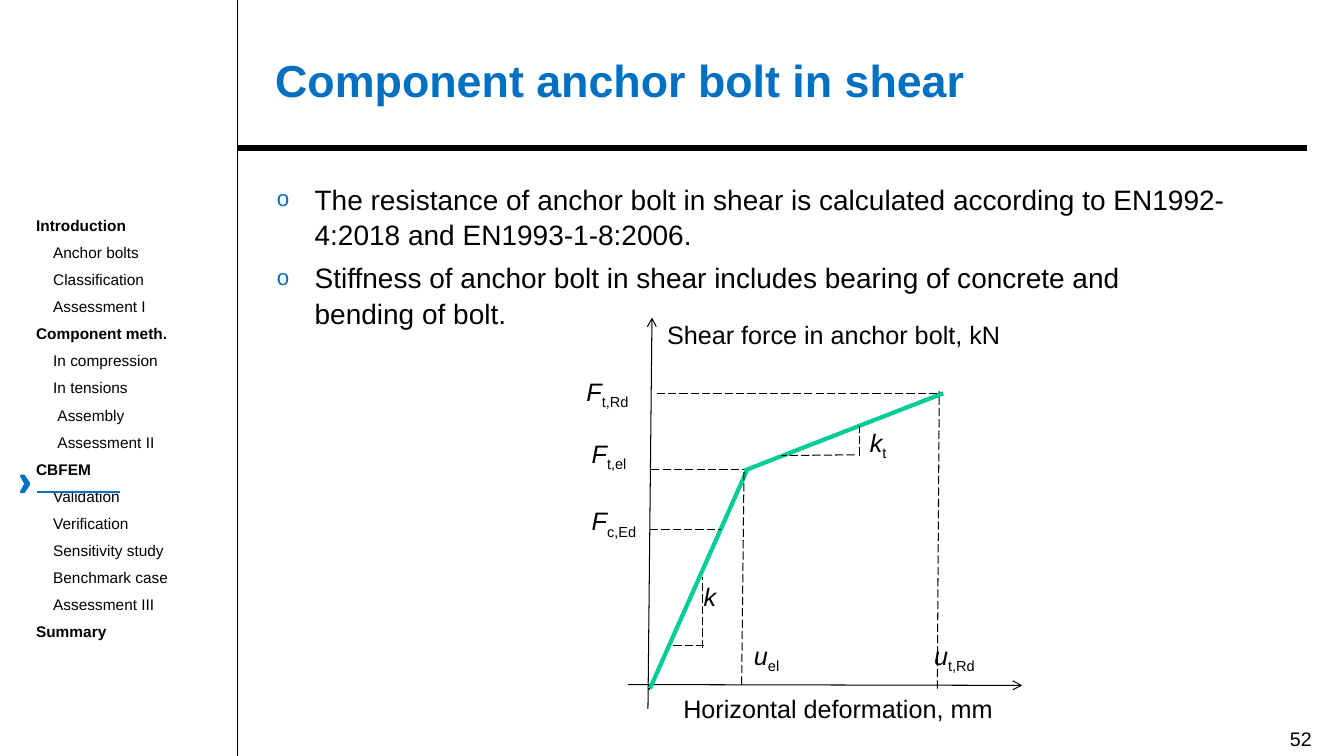
from dataclasses import dataclass, field
from typing import NamedTuple

from lxml import etree
from pptx import Presentation
from pptx.dml.color import RGBColor
from pptx.enum.dml import MSO_LINE
from pptx.enum.shapes import MSO_CONNECTOR
from pptx.enum.text import MSO_ANCHOR, PP_ALIGN
from pptx.oxml.ns import qn
from pptx.util import Cm, Pt

STRAIGHT, ELBOW = MSO_CONNECTOR.STRAIGHT, MSO_CONNECTOR.ELBOW
LONG_DASH = MSO_LINE.LONG_DASH
MIDDLE, TOP = MSO_ANCHOR.MIDDLE, MSO_ANCHOR.TOP
LEFT = PP_ALIGN.LEFT
TITLE_ONLY = 5


@dataclass(frozen=True)
class Theme:
    font: str = "Arial"
    black: RGBColor = field(default_factory=lambda: RGBColor(0, 0, 0))
    blue: RGBColor = field(default_factory=lambda: RGBColor(0x00, 0x70, 0xC0))
    green: RGBColor = field(default_factory=lambda: RGBColor(0x00, 0xCC, 0x99))
    title: int = 32
    body: int = 20
    label: int = 18
    page: int = 14
    menu: int = 11


THEME = Theme()


class Stroke(NamedTuple):
    color: RGBColor
    width: float
    dashed: bool = False
    arrow: bool = False


class Segment(NamedTuple):
    start: tuple[float, float]
    end: tuple[float, float]
    stroke: Stroke
    route: int = STRAIGHT


class Label(NamedTuple):
    box: tuple[float, float, float, float]
    text: str
    subscript: str = ""
    italic: bool = True


class MenuItem(NamedTuple):
    text: str
    indent: float = 0


FRAME = Stroke(THEME.black, 0.75)
RULE = Stroke(THEME.black, 4.5)
AXIS = Stroke(THEME.black, 0.75, arrow=True)
GUIDE = Stroke(THEME.black, 0.75, dashed=True)
CURVE = Stroke(THEME.green, 3)
MARKER = Stroke(THEME.blue, 1.5)

FRAME_LINES = [
    Segment((5.99, 19.05), (5.99, 0), FRAME),
    Segment((5.99, 3.73), (32.94, 3.73), RULE),
]
DIAGRAM_LINES = [
    Segment((23.62, 17.35), (23.67, 9.86), GUIDE),
    Segment((16.33, 17.86), (16.43, 8), AXIS),
    Segment((15.82, 17.25), (25.76, 17.27), AXIS),
    Segment((16.33, 17.3), (16.38, 17.35), Stroke(THEME.black, 1.5), ELBOW),
    Segment((16.38, 17.35), (18.82, 11.86), CURVE),
    Segment((23.77, 9.91), (18.75, 11.86), CURVE),
    Segment((23.62, 9.91), (16.56, 9.91), GUIDE),
    Segment((18.69, 17.25), (18.75, 11.84), GUIDE),
    Segment((16.41, 11.84), (18.75, 11.84), GUIDE),
    Segment((16.38, 13.34), (18.16, 13.34), GUIDE),
    Segment((17.7, 16.33), (17.7, 14.53), GUIDE),
    Segment((17.75, 16.26), (16.94, 16.26), GUIDE),
    Segment((21.54, 11.46), (19.69, 11.48), GUIDE),
    Segment((21.67, 11.48), (21.67, 10.74), GUIDE),
]
DIAGRAM_LABELS = [
    Label((16.56, 7.92, 9.78, 1.42), "Shear force in anchor bolt, kN", italic=False),
    Label((16.97, 17.35, 9.35, 1.22), "Horizontal deformation, mm", italic=False),
    Label((18.75, 16, 2.01, 1.5), "u", "el"),
    Label((23.29, 16, 2.24, 1.63), "u", "t,Rd"),
    Label((14.53, 9.35, 2.44, 1.4), "F", "t,Rd"),
    Label((14.66, 10.92, 2.41, 1.42), "F", "t,el"),
    Label((14.66, 12.62, 2.29, 1.5), "F", "c,Ed"),
    Label((17.48, 14.53, 0.91, 1.32), "k"),
    Label((21.67, 10.64, 1.78, 1.7), "k", "t"),
]
SUB, DEEP = 0.43, 0.54
MENU = [
    MenuItem("Introduction"),
    MenuItem("Anchor bolts", SUB),
    MenuItem("Classification", SUB),
    MenuItem("Assessment I", SUB),
    MenuItem("Component meth."),
    MenuItem("In compression", SUB),
    MenuItem("In tensions", SUB),
    MenuItem("Assembly", DEEP),
    MenuItem("Assessment II", DEEP),
    MenuItem("CBFEM"),
    MenuItem("Validation", SUB),
    MenuItem("Verification", SUB),
    MenuItem("Sensitivity study", SUB),
    MenuItem("Benchmark case", SUB),
    MenuItem("Assessment III", SUB),
    MenuItem("Summary"),
]
STATEMENTS = [
    "The resistance of anchor bolt in shear is calculated according to "
    "EN1992-4:2018 and EN1993-1-8:2006.",
    "Stiffness of anchor bolt in shear includes bearing of concrete and \vbending of bolt.",
]
CHEVRON = [(0.53, 11.99), (0.61, 11.99), (0.74, 12.19), (0.61, 12.4), (0.53, 12.4), (0.64, 12.19)]
CHEVRON_UNDERLINE = Segment((0.94, 12.4), (3.02, 12.4), MARKER)


def format_run(run, size: int, color: RGBColor = THEME.black, **extra) -> None:
    values = {"name": THEME.font, "size": Pt(size), "bold": False, "italic": False} | extra
    for name, value in values.items():
        setattr(run.font, name, value)
    run.font.color.rgb = color


def add_text_frame(slide, box: tuple, wrap: bool = True):
    frame = slide.shapes.add_textbox(*map(Cm, box)).text_frame
    frame.word_wrap = wrap
    frame.vertical_anchor = TOP
    return frame


def next_paragraph(frame, index: int, gap: float):
    """Return the paragraph at index, with space before all but the first."""
    if index == 0:
        return frame.paragraphs[0]
    paragraph = frame.add_paragraph()
    paragraph.space_before = Pt(gap)
    return paragraph


def draw_segment(slide, segment: Segment) -> None:
    stroke = segment.stroke
    connector = slide.shapes.add_connector(
        segment.route, *map(Cm, segment.start + segment.end))
    connector.line.color.rgb = stroke.color
    connector.line.width = Pt(stroke.width)
    if stroke.dashed:
        connector.line.dash_style = LONG_DASH
    properties = connector._element.spPr
    if stroke.arrow:
        etree.SubElement(properties.find(qn("a:ln")), qn("a:tailEnd"), type="arrow")
    etree.SubElement(properties, qn("a:effectLst"))


def draw_label(slide, label: Label) -> None:
    paragraph = add_text_frame(slide, label.box).paragraphs[0]
    symbol = paragraph.add_run()
    symbol.text = label.text
    format_run(symbol, THEME.label, italic=label.italic)
    if label.subscript:
        subscript = paragraph.add_run()
        subscript.text = label.subscript
        format_run(subscript, THEME.label)
        subscript._r.get_or_add_rPr().set("baseline", "-25000")


def draw_title(slide) -> None:
    title = slide.shapes.title
    box = {"left": 6.68, "top": 0.71, "width": 25.86, "height": 2.57}
    for name, value in box.items():
        setattr(title, name, Cm(value))
    title.text_frame.text = "Component anchor bolt in shear"
    title.text_frame.vertical_anchor = MIDDLE
    paragraph = title.text_frame.paragraphs[0]
    paragraph.alignment = LEFT
    format_run(paragraph.runs[0], THEME.title, THEME.blue, bold=True)


def draw_menu(slide) -> None:
    frame = add_text_frame(slide, (0.66, 5.33, 5.46, 11.51))
    for index, item in enumerate(MENU):
        paragraph = next_paragraph(frame, index, 6.1)
        paragraph.text = item.text
        paragraph._p.get_or_add_pPr().set("marL", str(Cm(item.indent)))
        format_run(paragraph.runs[0], THEME.menu, bold=item.indent == 0)


def add_bullet(paragraph) -> None:
    properties = paragraph._p.get_or_add_pPr()
    properties.set("marL", str(Cm(0.95)))
    properties.set("indent", str(Cm(-0.95)))
    color = etree.SubElement(properties, qn("a:buClr"))
    etree.SubElement(color, qn("a:srgbClr"), val=str(THEME.blue))
    etree.SubElement(properties, qn("a:buSzPct"), val="80000")
    etree.SubElement(properties, qn("a:buFont"), typeface=THEME.font)
    etree.SubElement(properties, qn("a:buChar"), char="o")


def draw_statements(slide) -> None:
    frame = add_text_frame(slide, (6.73, 4.42, 26.3, 4.09))
    for index, statement in enumerate(STATEMENTS):
        paragraph = next_paragraph(frame, index, 6)
        paragraph.text = statement
        paragraph.line_spacing = 1.05
        add_bullet(paragraph)
        for run in paragraph.runs:
            format_run(run, THEME.body)


def draw_page_number(slide) -> None:
    paragraph = add_text_frame(slide, (32.26, 18.19, 1.12, 0.86), wrap=False).paragraphs[0]
    paragraph.text = "52"
    format_run(paragraph.runs[0], THEME.page)


def draw_chevron(slide) -> None:
    corners = [(Cm(x), Cm(y)) for x, y in CHEVRON]
    builder = slide.shapes.build_freeform(*corners[0])
    builder.add_line_segments(corners[1:], close=True)
    chevron = builder.convert_to_shape()
    chevron.shadow.inherit = False
    chevron.fill.solid()
    chevron.fill.fore_color.rgb = MARKER.color
    chevron.line.color.rgb = MARKER.color
    chevron.line.width = Pt(MARKER.width)


def main() -> None:
    deck = Presentation()
    deck.slide_width, deck.slide_height = Cm(33.87), Cm(19.05)
    slide = deck.slides.add_slide(deck.slide_layouts[TITLE_ONLY])
    for segment in FRAME_LINES:
        draw_segment(slide, segment)
    draw_menu(slide)
    draw_page_number(slide)
    draw_title(slide)
    draw_statements(slide)
    for segment in DIAGRAM_LINES:
        draw_segment(slide, segment)
    for label in DIAGRAM_LABELS:
        draw_label(slide, label)
    draw_chevron(slide)
    draw_segment(slide, CHEVRON_UNDERLINE)
    deck.save("out.pptx")


if __name__ == "__main__":
    main()
